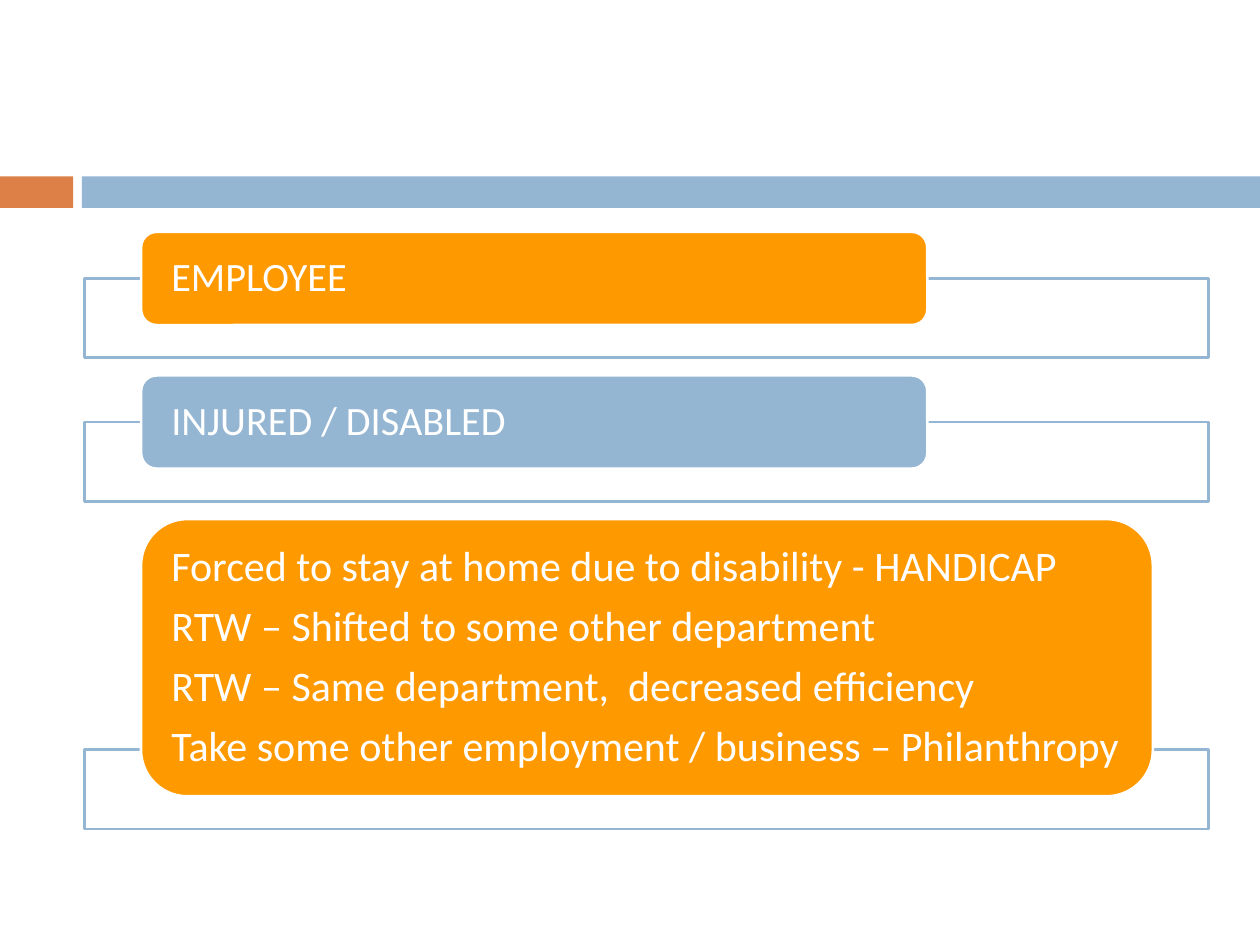
from pptx import Presentation
from pptx import util as u
from pptx.dml.color import RGBColor
from pptx.enum import shapes, text

ORANGE = RGBColor(0xFF, 0x99, 0x00)
RUST = RGBColor(0xDD, 0x80, 0x47)
BLUE = RGBColor(0x94, 0xB6, 0xD2)
WHITE = RGBColor(0xFF, 0xFF, 0xFF)

FRAME_LEFT, FRAME_WIDTH, FRAME_HEIGHT = 0.67, 8.92, 0.63
LABEL_LEFT, LABEL_INSET = 1.12, 0.24
OVERLAP = 0.37  # how far a label reaches down into its frame
CORNER = 0.1667  # corner radius as a share of the label height


class SlideBuilder:
    font = {"name": "Calibri"}
    frame = {"word_wrap": True, "vertical_anchor": text.MSO_ANCHOR.MIDDLE,
             "margin_top": 0, "margin_bottom": 0}
    paragraph = {"alignment": text.PP_ALIGN.LEFT, "line_spacing": 0.9}

    def __init__(self, slide):
        self.s = slide

    @staticmethod
    def apply(target, values):
        for name, value in values.items():
            setattr(target, name, value)

    def box(self, kind, left, top, width, height, fill, line=None):
        sp = self.s.shapes.add_shape(
            kind, *(u.Inches(v) for v in (left, top, width, height)))
        sp.shadow.inherit = False
        sp.fill.solid()
        sp.fill.fore_color.rgb = fill
        if line is None:
            sp.line.fill.background()
        else:
            sp.line.color.rgb = line
            sp.line.width = u.Pt(1.5)
        return sp

    def bar(self, left, width, fill):
        self.box(shapes.MSO_SHAPE.RECTANGLE, left, 1.4, width, 0.25, fill)

    def label(self, top, width, height, fill, size, lines):
        sp = self.box(shapes.MSO_SHAPE.ROUNDED_RECTANGLE,
                      LABEL_LEFT, top, width, height, fill, WHITE)
        sp.adjustments[0] = CORNER
        tf = sp.text_frame
        self.apply(tf, self.frame)
        # Rounded corners already push the text in by 0.29 of their radius
        margin = u.Inches(LABEL_INSET - 0.29 * CORNER * height)
        self.apply(tf, {"margin_left": margin, "margin_right": margin})
        for i, line in enumerate(lines):
            p = tf.paragraphs[0] if i == 0 else tf.add_paragraph()
            self.apply(p, self.paragraph)
            if i < len(lines) - 1:
                p.space_after = u.Pt(0.35 * size)
            r = p.add_run()
            r.text = line
            self.apply(r.font, {**self.font, "size": u.Pt(size)})
            r.font.color.rgb = WHITE

    def step(self, top, width, height, fill, size, lines):
        self.box(shapes.MSO_SHAPE.RECTANGLE, FRAME_LEFT, top + height - OVERLAP,
                 FRAME_WIDTH, FRAME_HEIGHT, WHITE, BLUE)
        self.label(top, width, height, fill, size, lines)


def main():
    prs = Presentation()
    prs.slide_width, prs.slide_height = u.Inches(10), u.Inches(7.5)
    b = SlideBuilder(prs.slides.add_slide(prs.slide_layouts[6]))

    # Header band
    b.bar(0, 0.58, RUST)
    b.bar(0.65, 9.35, BLUE)

    # Steps from employment to outcome
    b.step(1.84, 6.24, 0.74, ORANGE, 23, ["EMPLOYEE"])
    b.step(2.98, 6.24, 0.74, BLUE, 23, ["INJURED / DISABLED"])
    b.step(4.12, 8.03, 2.2, ORANGE, 24, [
        "Forced to stay at home due to disability - HANDICAP",
        "RTW – Shifted to some other department",
        "RTW – Same department,  decreased efficiency",
        "Take some other employment / business – Philanthropy",
    ])

    prs.save("out.pptx")


if __name__ == "__main__":
    main()
